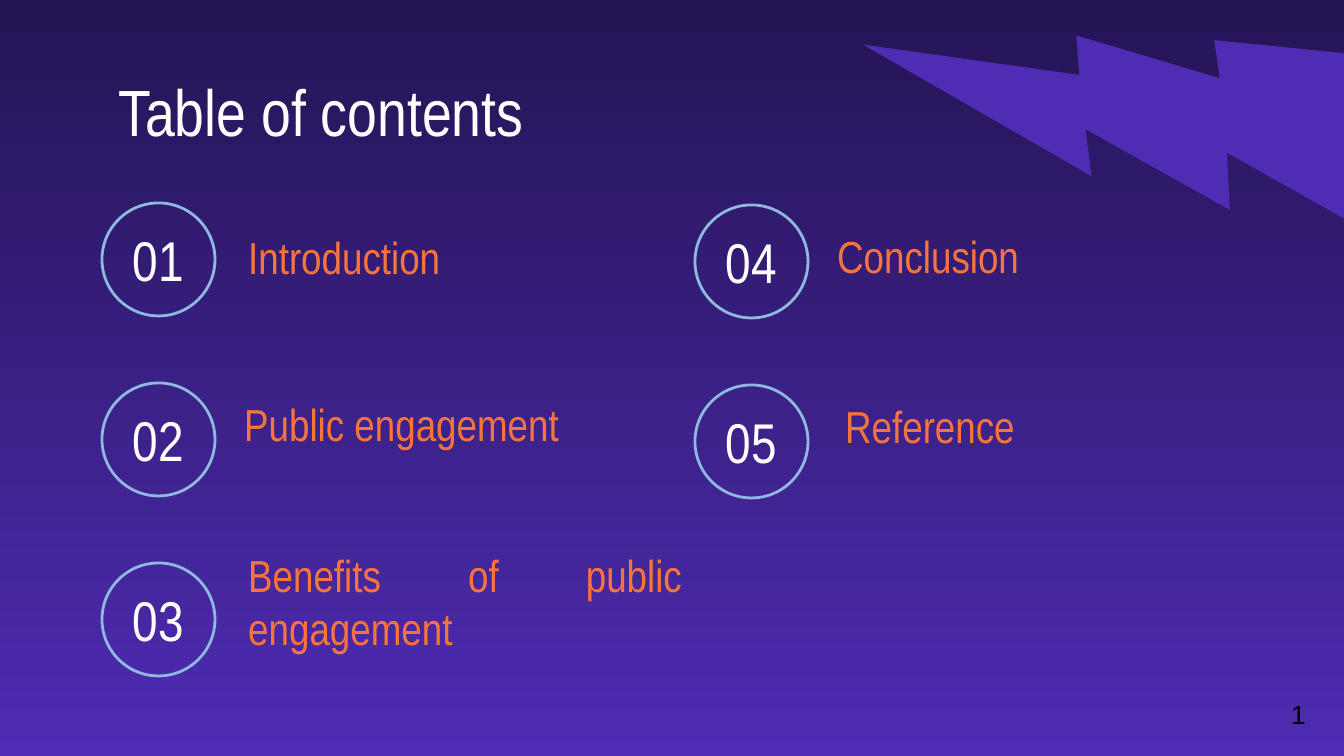
from pptx import Presentation
from pptx.dml.color import RGBColor
from pptx.enum import shapes, text
from pptx.util import Emu, Pt

SCALE = 914400 / 134.4
WHITE, ORANGE, BLUE = "FFFFFF", "F7743C", "8EB8DE"
NIGHT, VIOLET, BLACK = "241454", "4E2CB3", "000000"
NARROW = "Arial Narrow"
LEFT, CENTER, JUSTIFY = text.PP_ALIGN.LEFT, text.PP_ALIGN.CENTER, text.PP_ALIGN.JUSTIFY
TOP, MIDDLE = text.MSO_ANCHOR.TOP, text.MSO_ANCHOR.MIDDLE

TITLE = "Table of contents"
COLUMNS = [
    (102, 203, [
        ("01", "Introduction", (235, 232, 458, 50), LEFT),
        ("02", "Public engagement", (231, 399, 458, 50), LEFT),
        ("03", "Benefits of public engagement", (235, 527, 460, 148), JUSTIFY),
    ]),
    (695, 205, [
        ("04", "Conclusion", (824, 231, 458, 50), LEFT),
        ("05", "Reference", (832, 401, 458, 50), LEFT),
    ]),
]
CIRCLE, ROW_STEP = 113, 180
NUMBER_WIDTH, NUMBER_HEIGHT = 119, 129


def px(value):
    return Emu(round(value * SCALE))


def color(value):
    return RGBColor.from_string(value)


def add_text(slide, words, box, size, fill, font=NARROW, align=LEFT, anchor=MIDDLE,
             inset=Pt(7.2), wrap=True):
    frame = slide.shapes.add_textbox(*map(px, box)).text_frame
    frame.word_wrap = wrap
    frame.vertical_anchor = anchor
    frame.margin_left = frame.margin_right = Pt(7.2)
    frame.margin_top = frame.margin_bottom = inset
    paragraph = frame.paragraphs[0]
    paragraph.text = words
    paragraph.alignment = align
    paragraph.font.name = font
    paragraph.font.size = Pt(size)
    paragraph.font.color.rgb = color(fill)
    return frame


def add_background(slide):
    fill = slide.background.fill
    fill.gradient()
    fill.gradient_angle = 270
    for stop, position, value in zip(fill.gradient_stops, (0, 1), (NIGHT, VIOLET)):
        stop.position = position
        stop.color.rgb = color(value)


def add_bolt(slide):
    bolt = slide.shapes.add_shape(
        shapes.MSO_SHAPE.LIGHTNING_BOLT, px(941), px(-91), px(426), px(426))
    bolt.shadow.inherit = False
    bolt.rotation = 59.9
    bolt._element.spPr.get_or_add_xfrm().set("flipH", "1")
    bolt.fill.solid()
    bolt.fill.fore_color.rgb = color(VIOLET)
    bolt.line.fill.background()


def add_number(slide, number, left, top):
    circle = slide.shapes.add_shape(
        shapes.MSO_SHAPE.OVAL, px(left), px(top), px(CIRCLE), px(CIRCLE))
    circle.shadow.inherit = False
    circle.fill.background()
    circle.line.color.rgb = color(BLUE)
    circle.line.width = Pt(1.5)
    box = (left + (CIRCLE - NUMBER_WIDTH) / 2, top + (CIRCLE - NUMBER_HEIGHT) / 2,
           NUMBER_WIDTH, NUMBER_HEIGHT)
    add_text(slide, number, box, 30, WHITE, align=CENTER)


def main():
    presentation = Presentation()
    presentation.slide_width, presentation.slide_height = px(1344), px(756)
    slide = presentation.slides.add_slide(presentation.slide_layouts[6])
    add_background(slide)
    add_bolt(slide)
    add_text(slide, TITLE, (105, 58, 1133, 86), 35, WHITE, anchor=TOP)
    for left, top, entries in COLUMNS:
        for row, (number, heading, box, align) in enumerate(entries):
            add_number(slide, number, left, top + row * ROW_STEP)
            add_text(slide, heading, box, 24, ORANGE, align=align)
    page = add_text(slide, "1", (1278, 692, 42, 46), 14, BLACK, font="Arial",
                    anchor=TOP, inset=Pt(3.6), wrap=False)
    page.auto_size = text.MSO_AUTO_SIZE.SHAPE_TO_FIT_TEXT
    presentation.save("out.pptx")


if __name__ == "__main__":
    main()
